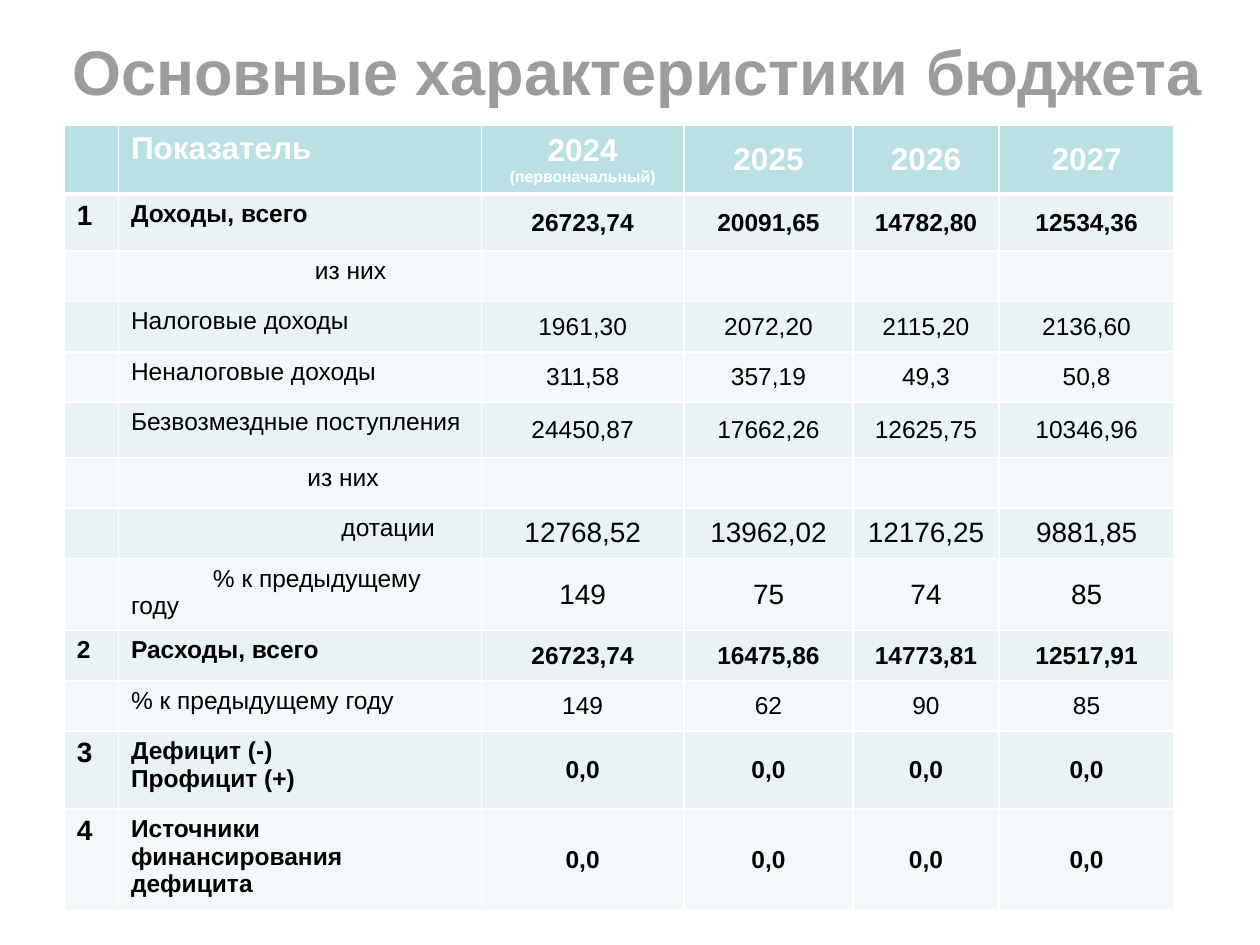
from lxml.etree import SubElement
from pptx import Presentation
from pptx.dml.color import RGBColor
from pptx.enum.text import MSO_ANCHOR, PP_ALIGN
from pptx.oxml.ns import qn
from pptx.util import Inches, Pt

COLORS = {
    "title": "9C9C9C", "header": "BBE0E3", "odd": "E7F3F4",
    "even": "F3F9FA", "text": "000000", "white": "FFFFFF",
}
TITLE = "Основные характеристики бюджета"
HEADER = ("", "Показатель", "2024\n(первоначальный)", "2025", "2026", "2027")
EMPTY = ("",) * 4
ZEROS = ("0,0",) * 4
ROWS = [
    ("1", "Доходы, всего", "26723,74", "20091,65", "14782,80", "12534,36"),
    ("", "из них", *EMPTY),
    ("", "Налоговые доходы", "1961,30", "2072,20", "2115,20", "2136,60"),
    ("", "Неналоговые доходы", "311,58", "357,19", "49,3", "50,8"),
    ("", "Безвозмездные поступления", "24450,87", "17662,26", "12625,75", "10346,96"),
    ("", "из них", *EMPTY),
    ("", "дотации", "12768,52", "13962,02", "12176,25", "9881,85"),
    ("", "% к предыдущему году", "149", "75", "74", "85"),
    ("2", "Расходы, всего", "26723,74", "16475,86", "14773,81", "12517,91"),
    ("", "% к предыдущему году", "149", "62", "90", "85"),
    ("3", "Дефицит (-)\nПрофицит (+)", *ZEROS),
    ("4", "Источники финансирования дефицита", *ZEROS),
]
COLUMN_WIDTHS = (0.43, 2.88, 1.61, 1.34, 1.16, 1.39)
ROW_HEIGHTS = (0.54, 0.45, 0.4, 0.4, 0.4, 0.44, 0.4, 0.4, 0.57, 0.4, 0.4, 0.62, 0.8)
LABEL_INDENTS = {2: 1.46, 6: 1.4, 7: 1.67, 8: 0.65}
LARGE_VALUE_ROWS = (7, 8)
SMALL_NUMBER_ROW = 9


def style_font(font, color, **formats):
    for name, value in {"name": "Arial", **formats}.items():
        setattr(font, name, value)
    font.color.rgb = RGBColor.from_string(COLORS[color])


def add_borders(cell, bottom, top):
    properties = cell._tc.get_or_add_tcPr()
    for tag, width in (("lnL", 1), ("lnR", 1), ("lnT", top), ("lnB", bottom)):
        line = SubElement(properties, qn(f"a:{tag}"), w=str(Pt(width)))
        fill = SubElement(line, qn("a:solidFill"))
        SubElement(fill, qn("a:srgbClr"), val=COLORS["white"])


def text_size(row, column, line):
    if row == 0:
        return 9 if line else 18
    if column == 0:
        return 14 if row == SMALL_NUMBER_ROW else 16
    return 16 if column > 1 and row in LARGE_VALUE_ROWS else 14


def fill_cell(cell, row, column, text, bold):
    add_borders(cell, bottom=3 if row == 0 else 1, top=3 if row == 1 else 1)
    band = "header" if row == 0 else "odd" if row % 2 else "even"
    cell.fill.solid()
    cell.fill.fore_color.rgb = RGBColor.from_string(COLORS[band])
    cell.vertical_anchor = MSO_ANCHOR.MIDDLE if column > 1 else MSO_ANCHOR.TOP
    if not text:
        return
    cell.text = text
    for line, paragraph in enumerate(cell.text_frame.paragraphs):
        paragraph.alignment = PP_ALIGN.CENTER if column > 1 else PP_ALIGN.LEFT
        if column == 1 and row in LABEL_INDENTS:
            properties = paragraph._p.get_or_add_pPr()
            properties.set("marL", "0")
            properties.set("indent", str(Inches(LABEL_INDENTS[row])))
        style_font(paragraph.runs[0].font, "text" if row else "white",
                   size=Pt(text_size(row, column, line)), bold=bold)


def add_title(slide):
    box = slide.shapes.add_textbox(Inches(0.43), Inches(0.21), Inches(9.26), Inches(0.71))
    box.text_frame.word_wrap = False
    paragraph = box.text_frame.paragraphs[0]
    paragraph.alignment = PP_ALIGN.CENTER
    run = paragraph.add_run()
    run.text = TITLE
    style_font(run.font, "title", size=Pt(36), bold=True)


def add_budget_table(slide):
    records = [HEADER, *ROWS]
    table = slide.shapes.add_table(
        len(records), len(HEADER), Inches(0.51), Inches(0.99),
        Inches(sum(COLUMN_WIDTHS)), Inches(sum(ROW_HEIGHTS))).table
    for column, width in zip(table.columns, COLUMN_WIDTHS):
        column.width = Inches(width)
    for row, height in zip(table.rows, ROW_HEIGHTS):
        row.height = Inches(height)
    for row, record in enumerate(records):
        bold = row == 0 or bool(record[0])
        for column, text in enumerate(record):
            fill_cell(table.cell(row, column), row, column, text, bold)


def main():
    presentation = Presentation()
    presentation.slide_width, presentation.slide_height = Inches(10), Inches(7.5)
    slide = presentation.slides.add_slide(presentation.slide_layouts[6])
    add_title(slide)
    add_budget_table(slide)
    presentation.save("out.pptx")


if __name__ == "__main__":
    main()
